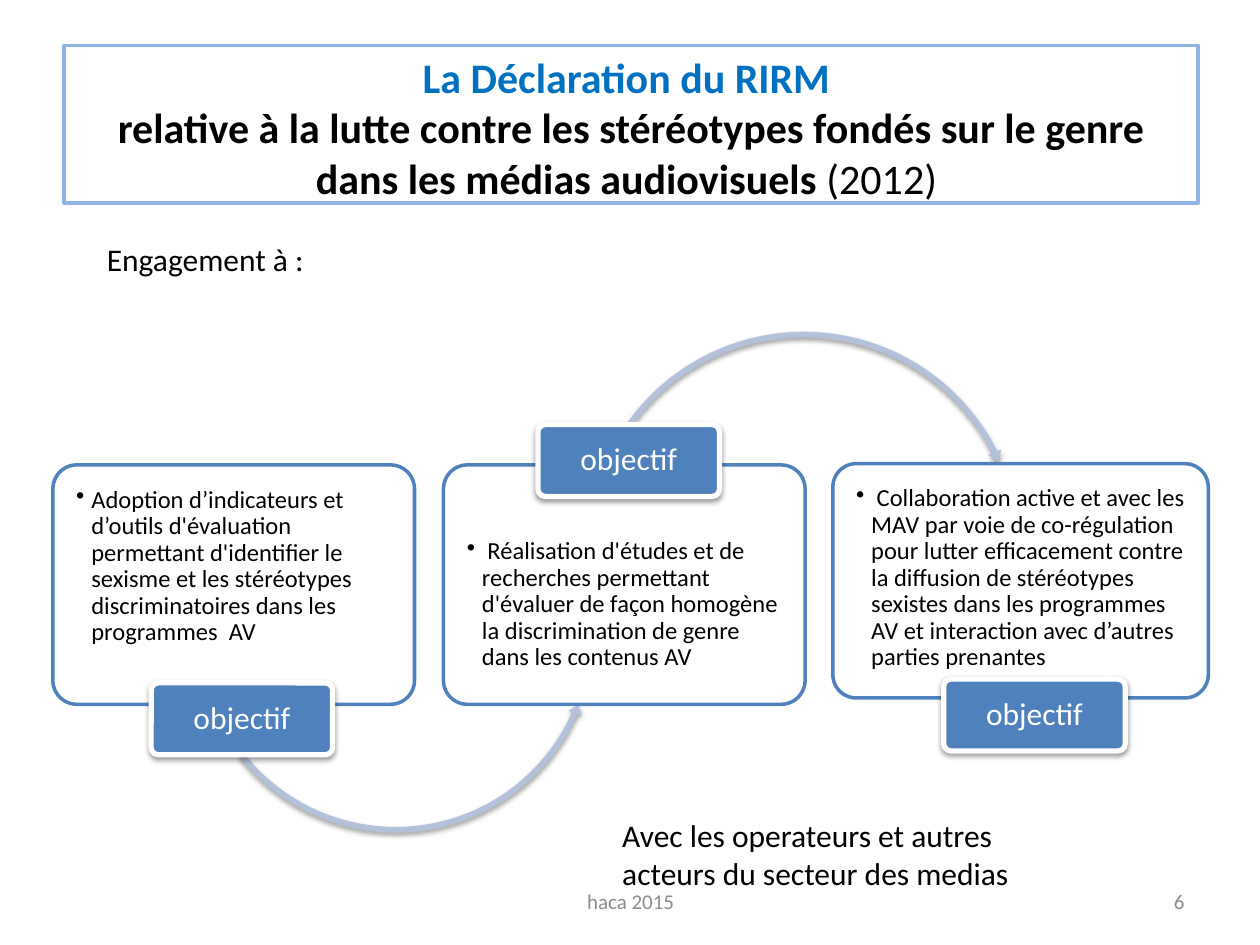
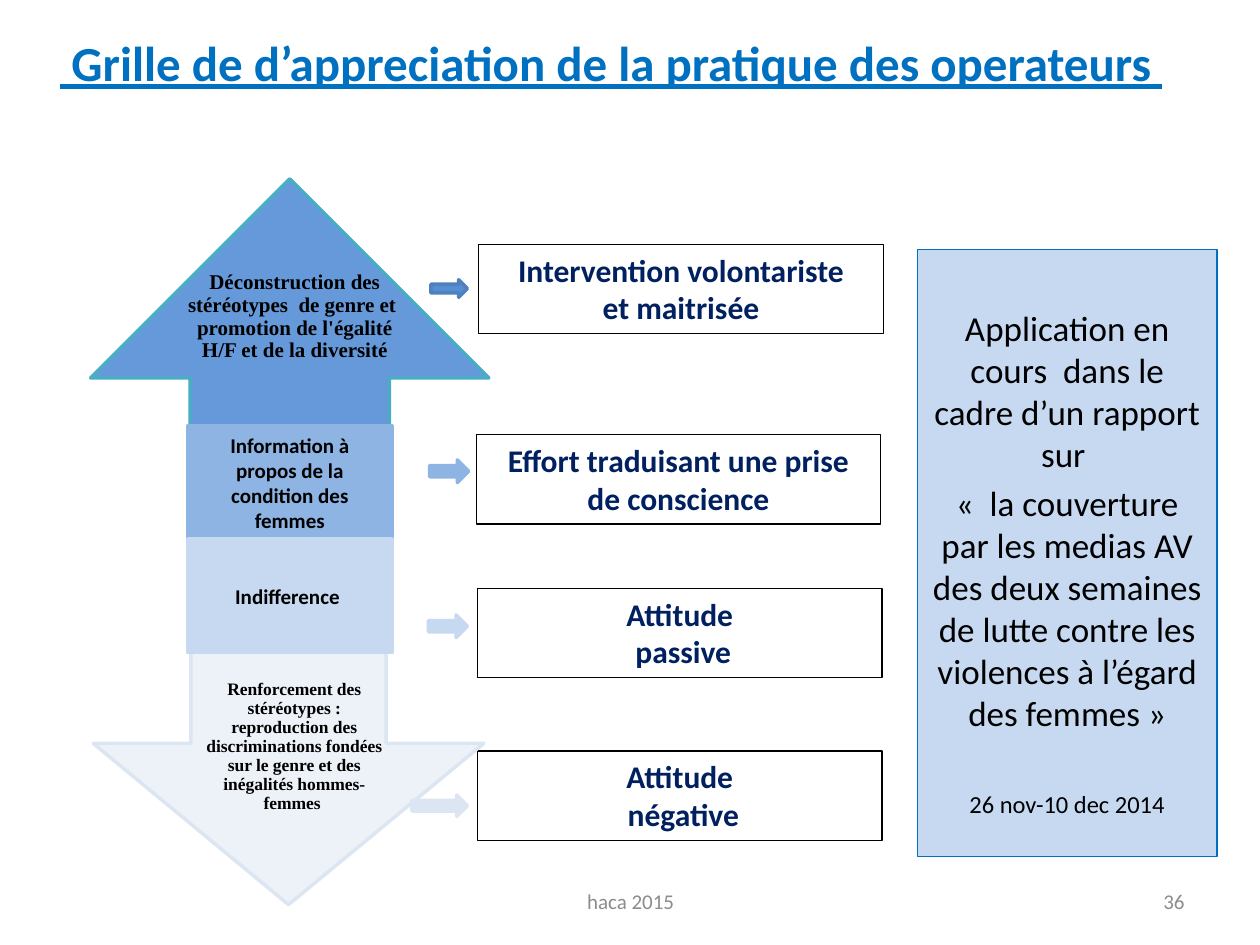
from typing import NamedTuple, Optional

from lxml.etree import SubElement
from pptx import Presentation
from pptx.dml.color import RGBColor
from pptx.enum.shapes import MSO_SHAPE as Kind
from pptx.enum.text import MSO_ANCHOR as Anchor, PP_ALIGN as Align
from pptx.oxml.ns import qn
from pptx.shapes.autoshape import Shape
from pptx.slide import Slide
from pptx.util import Inches, Pt

WHITE = RGBColor(0xFF, 0xFF, 0xFF)
BLACK = RGBColor(0x00, 0x00, 0x00)
GREY = RGBColor(0x8C, 0x8C, 0x8C)
AZURE = RGBColor(0x00, 0x70, 0xC0)
NAVY = RGBColor(0x00, 0x20, 0x60)
STEEL = RGBColor(0x4F, 0x81, 0xBD)
TEAL = RGBColor(0x4B, 0xAC, 0xC6)
MIST = RGBColor(0xB3, 0xC1, 0xDB)
# Scale of blues, from strong to faint
STRONG = RGBColor(0x55, 0x8E, 0xD5)
MEDIUM = RGBColor(0x8E, 0xB4, 0xE3)
LIGHT = RGBColor(0xC6, 0xD9, 0xF1)
FAINT = RGBColor(0xDC, 0xE6, 0xF2)

SANS = "Calibri"
SERIF = "Times New Roman"


class Box(NamedTuple):
    left: float
    top: float
    width: float
    height: float


class Goal(NamedTuple):
    """A card, its label's corner and the curved arrow that leaves it."""
    card: Box
    text: str
    label: tuple[float, float]
    inset: float = 0.12
    curve: Optional[Kind] = None
    ring: Optional[Box] = None
    bend: tuple[float, ...] = ()


class Grade(NamedTuple):
    """A small arrow and the attitude it points to."""
    arrow: Box
    fill: RGBColor
    line: RGBColor
    box: Box
    lines: tuple[str, ...]


GOALS = (
    Goal(Box(0.42, 3.69, 2.87, 1.9),
         "Adoption d’indicateurs et d’outils d'évaluation permettant d'identifier le "
         "sexisme et les stéréotypes discriminatoires dans les programmes  AV",
         (1.2, 5.42), curve=Kind.LEFT_CIRCULAR_ARROW, ring=Box(1.53, 3.42, 3.22, 3.22),
         bend=(0.014, 1.713, 14.389, 85.166, 0.017)),
    Goal(Box(3.52, 3.69, 2.87, 1.9),
         " Réalisation d'études et de recherches permettant d'évaluer de façon "
         "homogène la discrimination de genre dans les contenus AV",
         (4.27, 3.37), inset=0.53, curve=Kind.CIRCULAR_ARROW,
         ring=Box(4.63, 2.6, 3.5, 3.5),
         bend=(0.013, 1.574, 200.024, 129.108, 0.016)),
    Goal(Box(6.61, 3.68, 2.98, 1.86),
         " Collaboration active et avec les MAV par voie de co-régulation pour lutter "
         "efficacement contre la diffusion de stéréotypes sexistes dans les programmes "
         "AV et interaction avec d’autres parties prenantes",
         (7.49, 5.39)),
)

GRADES = (
    Grade(Box(3.42, 2.22, 0.29, 0.14), STRONG, STEEL, Box(3.8, 1.94, 3.21, 0.71),
          ("Intervention volontariste", "et maitrisée")),
    Grade(Box(3.41, 3.65, 0.31, 0.18), MEDIUM, MEDIUM, Box(3.78, 3.45, 3.21, 0.71),
          ("Effort traduisant une prise de conscience",)),
    Grade(Box(3.4, 4.88, 0.31, 0.18), LIGHT, LIGHT, Box(3.79, 4.67, 3.21, 0.71),
          ("Attitude", " passive")),
    Grade(Box(3.27, 6.31, 0.44, 0.17), FAINT, FAINT, Box(3.79, 5.96, 3.21, 0.71),
          ("Attitude", " négative")),
)


def place(box: Box) -> list[int]:
    return [Inches(size) for size in box]


def frame(shape: Shape, anchor: Anchor = Anchor.TOP,
          inset: tuple[float, ...] = (0.1, 0.05, 0.1, 0.05)) -> Shape:
    """Set wrapping, anchor and insets (left, top, right, bottom)."""
    body = shape.text_frame
    body.word_wrap = True
    body.vertical_anchor = anchor
    (body.margin_left, body.margin_top,
     body.margin_right, body.margin_bottom) = map(Inches, inset)
    return shape


def draw(slide: Slide, kind: Kind, box: Box, fill: Optional[RGBColor] = None,
         line: Optional[RGBColor] = None, weight: float = 2, alpha: int = 100,
         bend: tuple[float, ...] = (), shade: bool = False) -> Shape:
    shape = slide.shapes.add_shape(kind, *place(box))
    for index, value in enumerate(bend):
        shape.adjustments[index] = value
    if fill is None:
        shape.fill.background()
    else:
        shape.fill.solid()
        shape.fill.fore_color.rgb = fill
    if line is None:
        shape.line.fill.background()
    else:
        shape.line.color.rgb = line
        shape.line.width = Pt(weight)
    shape.shadow.inherit = False
    props = shape._element.spPr
    if alpha < 100:
        tint = props.find(qn("a:solidFill"))[0]
        SubElement(tint, qn("a:alpha"), val=str(alpha * 1000))
    if shade:
        drop = SubElement(props.find(qn("a:effectLst")), qn("a:outerShdw"),
                          blurRad=str(Pt(3.1)), dist=str(Pt(1.6)),
                          dir="5400000", rotWithShape="0")
        tint = SubElement(drop, qn("a:srgbClr"), val=str(BLACK))
        SubElement(tint, qn("a:alpha"), val="38000")
    return frame(shape)


def label(slide: Slide, box: Box) -> Shape:
    return frame(slide.shapes.add_textbox(*place(box)))


def write(shape: Shape, text: str, size: float = 18, color: RGBColor = BLACK,
          bold: bool = False, under: bool = False, font: str = SANS,
          align: Align = Align.CENTER, spacing: float = 1, before: float = 0,
          bullet: bool = False, join: bool = False) -> None:
    """Add a paragraph, or with join a run at the end of the last one."""
    body = shape.text_frame
    para = body.paragraphs[-1]
    if not join:
        if para.runs:
            para = body.add_paragraph()
        para.alignment = align
        para.line_spacing = spacing
        para.space_before = Pt(before)
        if bullet:
            props = para._p.get_or_add_pPr()
            props.set("marL", str(Inches(0.12)))
            props.set("indent", str(-Inches(0.12)))
            SubElement(props, qn("a:buChar"), char="•")
    run = para.add_run()
    run.text = text
    run.font.name = font
    run.font.size = Pt(size)
    run.font.bold = bold
    run.font.underline = under
    run.font.color.rgb = color


def foot(slide: Slide, page: int) -> None:
    for box, text, align in (
        (Box(3.42, 6.95, 3.17, 0.4), "haca 2015", Align.CENTER),
        (Box(7.17, 6.95, 2.33, 0.4), str(page), Align.RIGHT),
    ):
        shape = frame(label(slide, box), Anchor.MIDDLE)
        write(shape, text, size=12, color=GREY, align=align)


def pledge(slide: Slide, goal: Goal) -> None:
    card = draw(slide, Kind.ROUNDED_RECTANGLE, goal.card, WHITE, STEEL,
                alpha=90, bend=(0.1,))
    frame(card, inset=(0.13, goal.inset, 0.13, 0))
    write(card, goal.text, size=14, align=Align.LEFT, spacing=0.9, bullet=True)
    if goal.curve is not None:
        draw(slide, goal.curve, goal.ring, MIST, bend=goal.bend, shade=True)
    tag = draw(slide, Kind.ROUNDED_RECTANGLE, Box(*goal.label, 1.44, 0.57), STEEL,
               WHITE, weight=3, bend=(0.1,), shade=True)
    frame(tag, Anchor.MIDDLE, (0.04, 0.03, 0.04, 0.03))
    write(tag, "objectif", color=WHITE, spacing=0.9)


def pledges(slide: Slide) -> None:
    for goal in GOALS:
        pledge(slide, goal)
    title = draw(slide, Kind.RECTANGLE, Box(0.51, 0.36, 9, 1.25), WHITE, MEDIUM)
    write(title, "La Déclaration du RIRM ", size=24, color=AZURE, bold=True)
    write(title, "relative à la lutte contre les stéréotypes fondés sur le genre "
          "dans les médias audiovisuels ", size=24, bold=True)
    write(title, "(2012) ", size=24, join=True)
    write(label(slide, Box(0.75, 1.86, 2.6, 0.4)), "Engagement à :", align=Align.LEFT)
    write(label(slide, Box(4.84, 6.43, 3.46, 0.71)),
          "Avec les operateurs et autres acteurs du secteur des medias",
          align=Align.LEFT)
    foot(slide, 6)


def scale(slide: Slide) -> None:
    """Draw the two-headed arrow that runs from best to worst practice."""
    draw(slide, Kind.UP_ARROW, Box(0.72, 1.42, 3.16, 3.63), STRONG, TEAL, alpha=90)
    best = frame(label(slide, Box(1.4, 1.65, 1.88, 1.82)), Anchor.MIDDLE,
                 (0.09, 0, 0.09, 0.09))
    write(best, "Déconstruction des stéréotypes  de genre et  promotion de "
          "l'égalité H/F et de la diversité", size=12, bold=True, font=SERIF,
          spacing=0.9)
    draw(slide, Kind.DOWN_ARROW, Box(0.74, 4.62, 3.1, 2.56), FAINT, FAINT, alpha=50)
    worst = frame(label(slide, Box(1.49, 5.06, 1.69, 1.81)), Anchor.MIDDLE,
                  (0.08, 0, 0.08, 0.08))
    write(worst, "Renforcement des stéréotypes : reproduction des discriminations "
          "fondées sur le genre et des inégalités hommes-femmes ", size=10,
          bold=True, font=SERIF, spacing=0.9)
    for top, color, text in (
        (3.38, MEDIUM, "Information à propos de la condition des femmes"),
        (4.28, LIGHT, "Indifference "),
    ):
        step = draw(slide, Kind.RECTANGLE, Box(1.49, top, 1.62, 0.9), color, color)
        write(frame(step, Anchor.MIDDLE), text, size=12, bold=True)


def grid(slide: Slide) -> None:
    title = label(slide, Box(0.35, 0.21, 9, 0.97))
    write(title, " Grille de d’appreciation de la pratique des operateurs ",
          size=28, color=AZURE, bold=True, under=True)
    for grade in GRADES:
        draw(slide, Kind.RIGHT_ARROW, grade.arrow, grade.fill, grade.line)
        box = draw(slide, Kind.RECTANGLE, grade.box, line=BLACK, weight=0.75)
        for text in grade.lines:
            write(box, text, color=NAVY, bold=True)
    panel = draw(slide, Kind.RECTANGLE, Box(7.28, 1.98, 2.38, 4.82), LIGHT, AZURE,
                 weight=0.75)
    frame(panel, inset=(0.1, 0.45, 0.1, 0.05))
    write(panel, "Application en cours  dans le cadre d’un rapport sur ", size=20)
    write(panel, "«\u00a0 la couverture par les medias AV des deux semaines de lutte "
          "contre les violences à l’égard des femmes\u00a0»".replace("\u00a0", " "),
          size=20, before=4)
    write(panel, "26 nov-10 dec 2014", size=14, before=32)
    scale(slide)
    foot(slide, 36)


def main() -> None:
    deck = Presentation()
    deck.slide_width, deck.slide_height = Inches(10), Inches(7.5)
    for build in (pledges, grid):
        build(deck.slides.add_slide(deck.slide_layouts[6]))
    deck.save("out.pptx")


if __name__ == "__main__":
    main()
